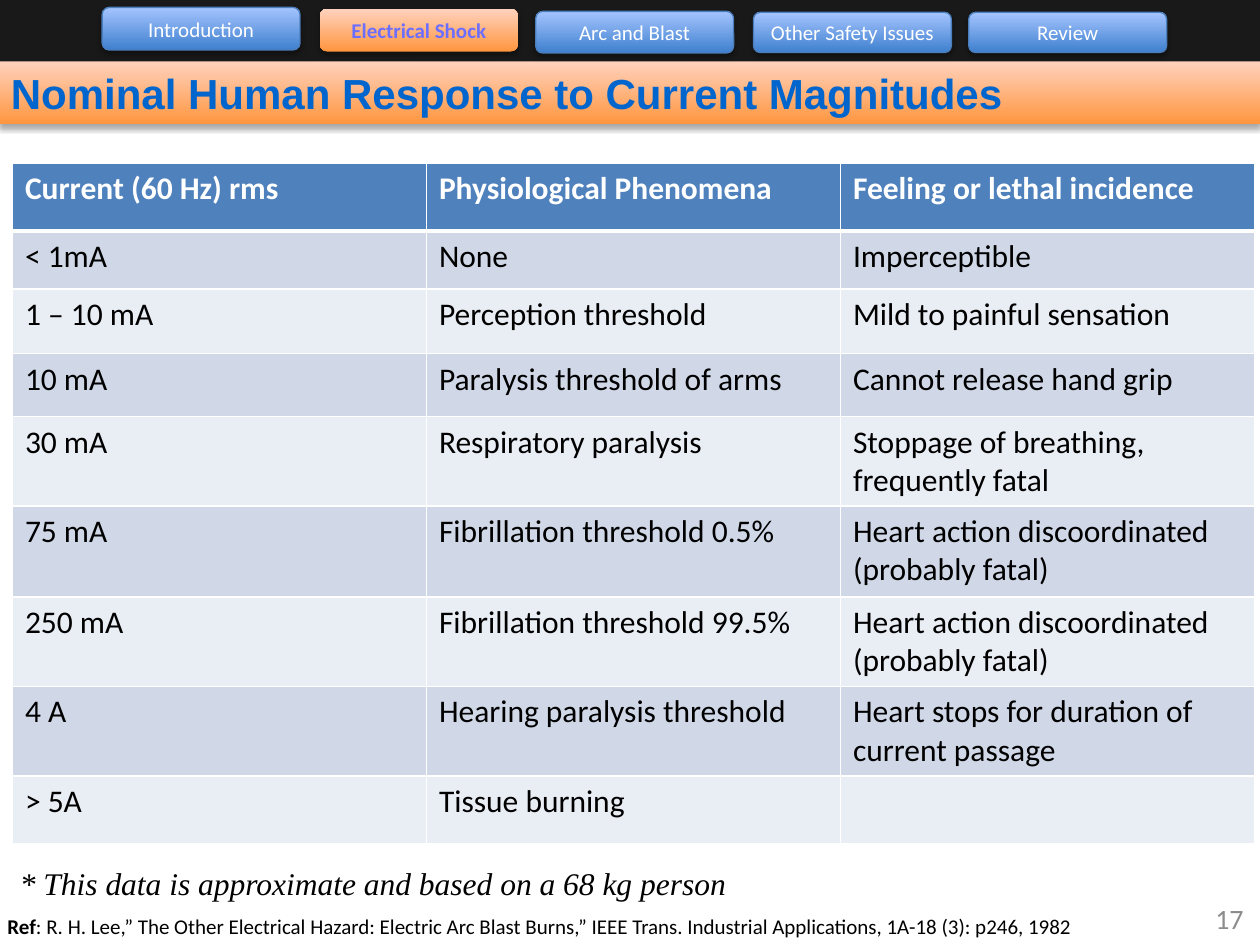
from dataclasses import dataclass

from lxml import etree
from pptx import Presentation
from pptx.dml.color import RGBColor
from pptx.enum.shapes import MSO_SHAPE
from pptx.enum.text import MSO_ANCHOR, PP_ALIGN
from pptx.oxml import parse_xml
from pptx.oxml.ns import nsdecls, qn
from pptx.util import Cm, Pt

RECT = MSO_SHAPE.RECTANGLE
ROUNDED = MSO_SHAPE.ROUNDED_RECTANGLE
TOP, MIDDLE = MSO_ANCHOR.TOP, MSO_ANCHOR.MIDDLE
LEFT, CENTER, RIGHT = PP_ALIGN.LEFT, PP_ALIGN.CENTER, PP_ALIGN.RIGHT


@dataclass(frozen=True)
class Theme:
    bar: str = "191919"
    orange: tuple = ("FF953E", "FFD2BD")
    blue: tuple = ("3F80CE", "A4C4FF")
    tab_line: str = "4B7EBC"
    active: str = "6C6EFF"
    title: str = "0065CC"
    header: str = "4F81BD"
    bands: tuple = ("D0D8E8", "E9EDF4")
    white: str = "FFFFFF"
    black: str = "000000"
    gray: str = "8C8C8C"
    sans: str = "Calibri"
    heading: str = "Arial"
    serif: str = "Times New Roman"
    title_size: int = 24
    body_size: int = 18
    number_size: int = 16
    small_size: int = 12


class Deck:
    def __init__(self, theme):
        self.theme = theme
        self.prs = Presentation()
        self.prs.slide_width, self.prs.slide_height = Cm(25.4), Cm(19.05)
        self.s = self.prs.slides.add_slide(self.prs.slide_layouts[6])

    def style(self, p, size, color, font=None, bold=None, italic=None, align=LEFT):
        p.alignment = align
        p.font.size, p.font.name = Pt(size), font or self.theme.sans
        p.font.bold, p.font.italic = bold, italic
        p.font.color.rgb = RGBColor.from_string(color)

    def box(self, kind, box, fill, line=None):
        sp = self.s.shapes.add_shape(kind, *map(Cm, box))
        sp.shadow.inherit = False
        if isinstance(fill, tuple):
            sp.fill.gradient()
            sp.fill.gradient_angle = 90
            for stop, color, position in zip(sp.fill.gradient_stops, fill, (0, 1)):
                stop.color.rgb = RGBColor.from_string(color)
                stop.position = position
            self.shadow(sp)
        else:
            sp.fill.solid()
            sp.fill.fore_color.rgb = RGBColor.from_string(fill)
        if line:
            sp.line.color.rgb = RGBColor.from_string(line)
            sp.line.width = Pt(0.75)
        else:
            sp.line.fill.background()
        return sp

    def shadow(self, sp):
        effects = sp._element.spPr.find(qn("a:effectLst"))
        effects.append(parse_xml(
            f'<a:outerShdw {nsdecls("a")} blurRad="40000" dist="23000" dir="5400000" '
            'rotWithShape="0"><a:srgbClr val="000000"><a:alpha val="35000"/>'
            '</a:srgbClr></a:outerShdw>'))

    def label(self, sp, text, size, color, anchor=MIDDLE, **style):
        tf = sp.text_frame
        tf.word_wrap, tf.vertical_anchor = True, anchor
        p = tf.paragraphs[0]
        p.text = text
        self.style(p, size, color, **style)

    def text(self, box, text, size, color, anchor=TOP, **style):
        sp = self.s.shapes.add_textbox(*map(Cm, box))
        self.label(sp, text, size, color, anchor, **style)

    def reference(self, box, lead, rest):
        sp = self.s.shapes.add_textbox(*map(Cm, box))
        tf = sp.text_frame
        tf.word_wrap = True
        p = tf.paragraphs[0]
        self.style(p, self.theme.small_size, self.theme.black)
        r = p.add_run()
        r.text, r.font.bold = lead, True
        p.add_run().text = rest

    def tab(self, box, text, active):
        t = self.theme
        sp = self.box(ROUNDED, box, t.orange if active else t.blue,
                      None if active else t.tab_line)
        self.label(sp, text, t.small_size, t.active if active else t.white,
                   bold=active, align=CENTER)

    def borders(self, cell, widths):
        tc_pr = cell._tc.get_or_add_tcPr()
        for side, width in zip("LRTB", widths):
            ln = etree.SubElement(tc_pr, qn(f"a:ln{side}"), w=str(Pt(width)))
            fill = etree.SubElement(ln, qn("a:solidFill"))
            etree.SubElement(fill, qn("a:srgbClr"), val=self.theme.white)

    def table(self, box, rows, heights):
        t = self.theme
        table = self.s.shapes.add_table(len(rows), len(rows[0]), *map(Cm, box)).table
        for row, height in zip(table.rows, heights):
            row.height = Cm(height)
        for i, row in enumerate(rows):
            head = i == 0
            for j, text in enumerate(row):
                cell = table.cell(i, j)
                self.borders(cell, (1, 1, 3 if i == 1 else 1, 3 if head else 1))
                cell.fill.solid()
                cell.fill.fore_color.rgb = RGBColor.from_string(
                    t.header if head else t.bands[(i - 1) % 2])
                cell.text = text
                self.style(cell.text_frame.paragraphs[0], t.body_size,
                           t.white if head else t.black, bold=head)


TABS = [
    ("Introduction", 2.06, 0.15, 0.86),
    ("Electrical Shock", 6.45, 0.18, 0.86),
    ("Arc and Blast", 10.8, 0.23, 0.84),
    ("Other Safety Issues", 15.19, 0.25, 0.81),
    ("Review", 19.53, 0.25, 0.81),
]
ROWS = [
    ("Current (60 Hz) rms", "Physiological Phenomena", "Feeling or lethal incidence"),
    ("< 1mA", "None", "Imperceptible"),
    ("1 – 10 mA", "Perception threshold", "Mild to painful sensation"),
    ("10 mA", "Paralysis threshold of arms", "Cannot release hand grip"),
    ("30 mA", "Respiratory paralysis", "Stoppage of breathing, frequently fatal"),
    ("75 mA", "Fibrillation threshold 0.5%", "Heart action discoordinated (probably fatal)"),
    ("250 mA", "Fibrillation threshold 99.5%", "Heart action discoordinated (probably fatal)"),
    ("4 A", "Hearing paralysis threshold", "Heart stops for duration of current passage"),
    ("> 5A", "Tissue burning", ""),
]
ROW_HEIGHTS = [1.37, 1.17, 1.3, 1.27, 1.77, 1.83, 1.77, 1.77, 1.37]


def main():
    t = Theme()
    deck = Deck(t)
    title = deck.box(RECT, (-0.03, 1.24, 25.43, 1.27), t.orange)
    deck.label(title, "Nominal Human Response to Current Magnitudes", t.title_size,
               t.title, TOP, font=t.heading, bold=True)
    deck.box(RECT, (0, 0, 25.4, 1.24), t.bar)
    for text, left, top, height in TABS:
        deck.tab((left, top, 3.99, height), text, text == "Electrical Shock")
    deck.table((0.25, 3.29, 25.04, sum(ROW_HEIGHTS)), ROWS, ROW_HEIGHTS)
    deck.text((0.15, 17.3, 19.53, 1.02),
              "* This data is approximate and based on a 68 kg person",
              t.body_size, t.black, font=t.serif, italic=True)
    deck.reference((-0.1, 18.29, 23.06, 0.76), "Ref",
                   ": R. H. Lee,” The Other Electrical Hazard: Electric Arc Blast Burns,” "
                   "IEEE Trans. Industrial Applications, 1A-18 (3): p246, 1982")
    deck.text((24.08, 18.01, 1.24, 1.02), "17", t.number_size, t.gray, MIDDLE, align=RIGHT)
    deck.prs.save("out.pptx")


if __name__ == "__main__":
    main()
